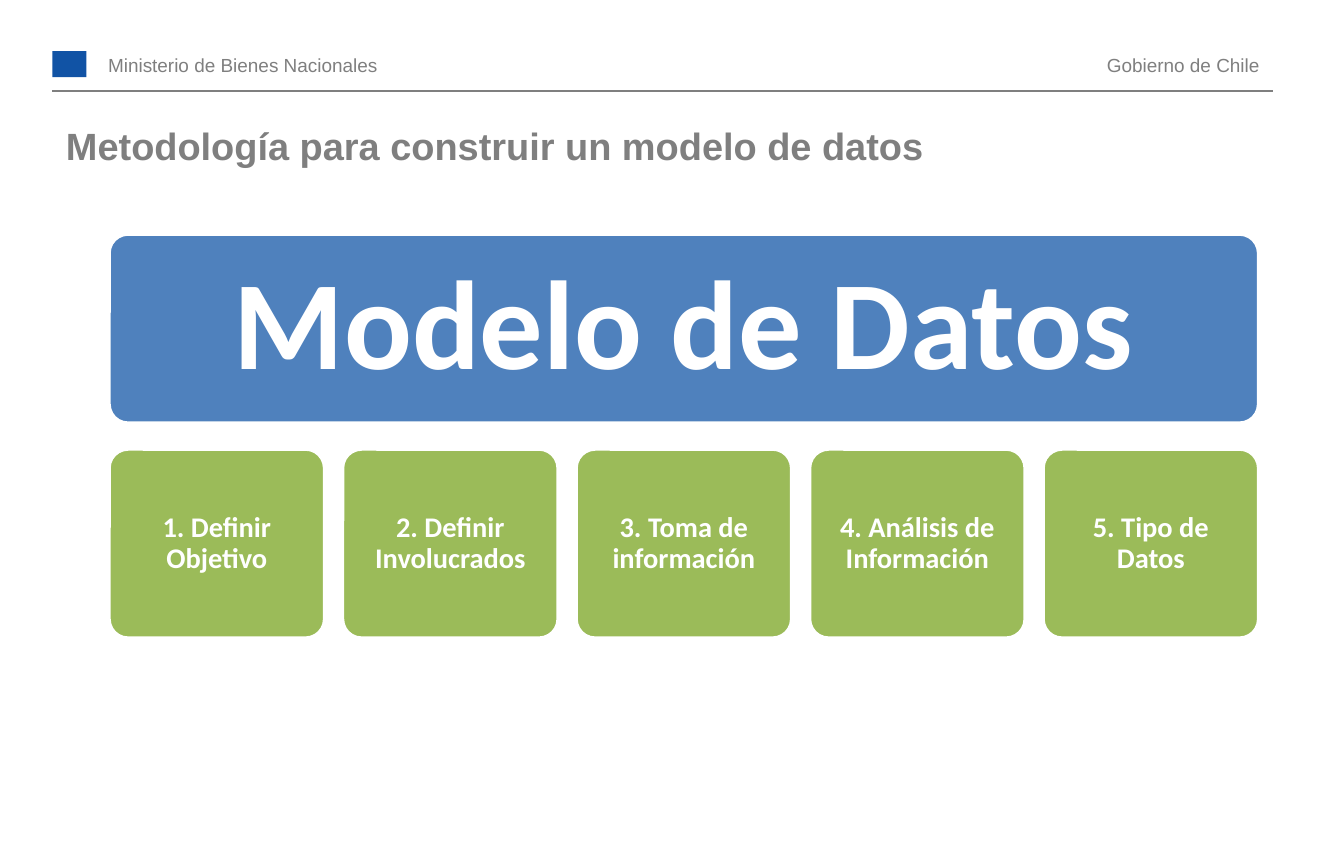
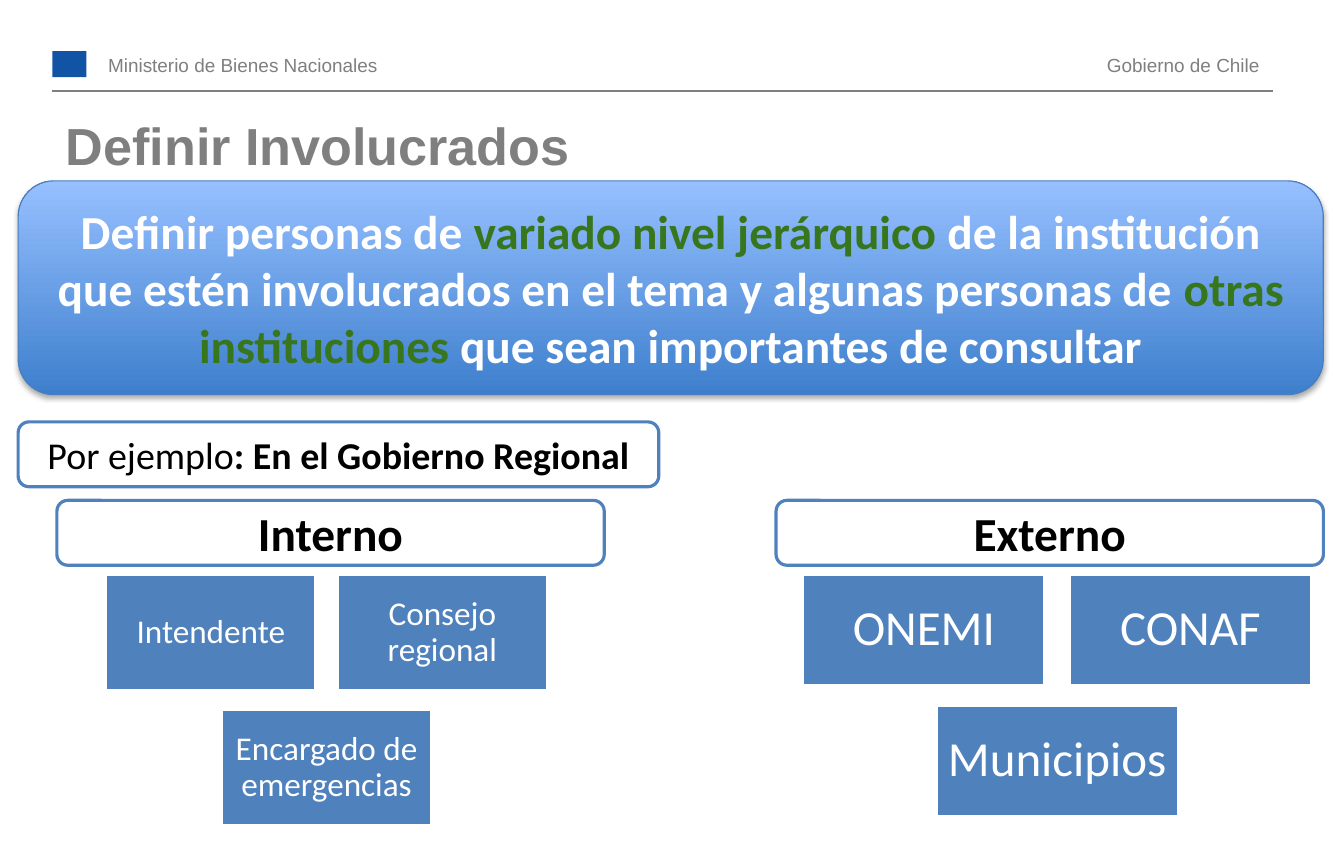
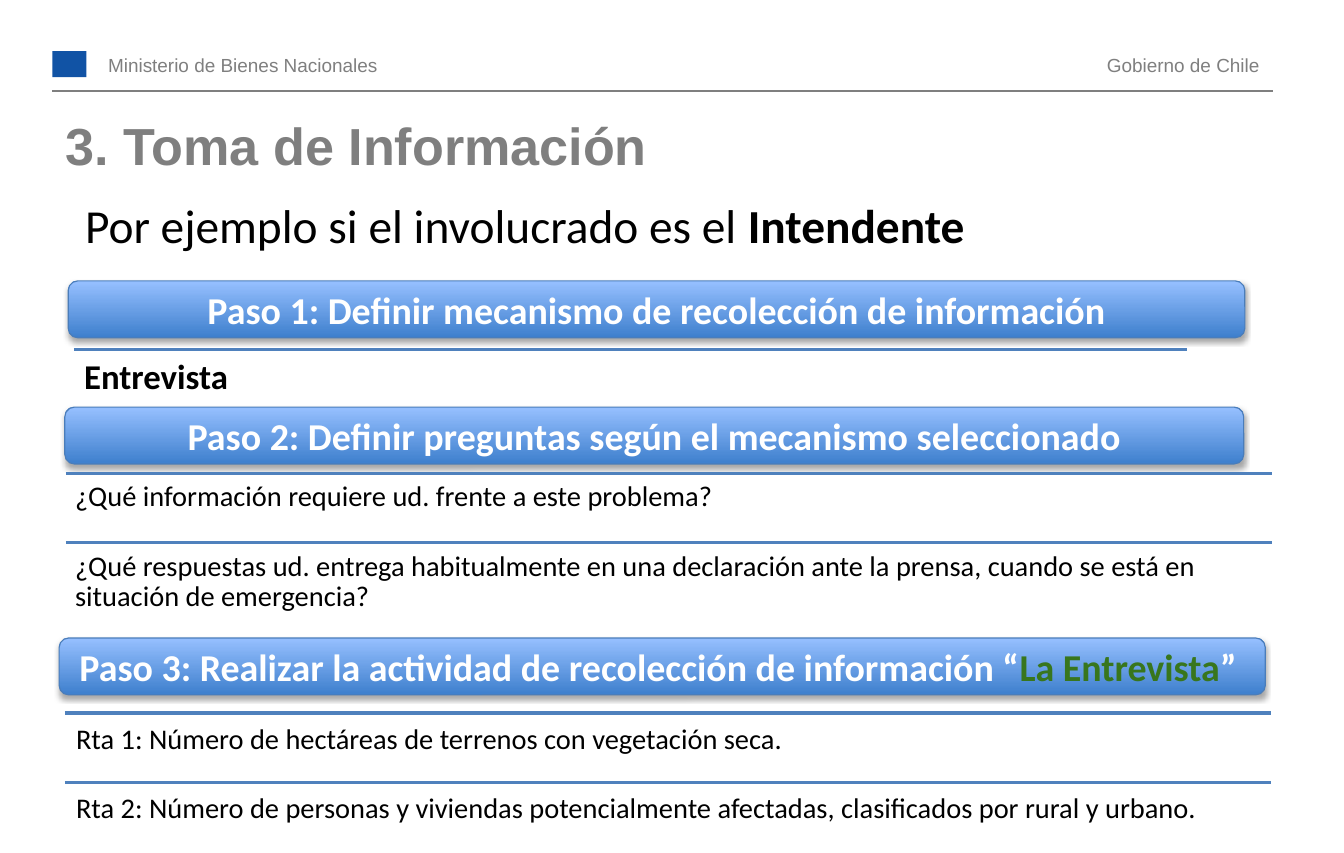
import dataclasses

import lxml.etree
import pptx
import pptx.dml.color
import pptx.enum.dml
import pptx.enum.shapes
import pptx.enum.text
import pptx.oxml.ns
import pptx.util

INSETS = (0.12, 0.06, 0.12, 0.06)
SHAPES = pptx.enum.shapes.MSO_SHAPE
ALIGN = pptx.enum.text.PP_ALIGN
ANCHOR = pptx.enum.text.MSO_ANCHOR


@dataclasses.dataclass(frozen=True)
class Theme:
    heading_font: str = "Arial"
    body_font: str = "Calibri"
    gray: str = "7F7F7F"
    emblem: str = "1153A5"
    blue: str = "4F81BD"
    green: str = "9BBB59"
    accent: str = "38761D"
    white: str = "FFFFFF"
    black: str = "000000"
    band_bottom: str = "3E7FCD"
    band_top: str = "96C0FF"
    band_edge: str = "4A7DBA"
    header: int = 12
    row: int = 18
    member: int = 21
    entry: int = 22
    step: int = 24
    lead: int = 30
    institution: int = 31
    title: int = 33
    hero: int = 80
    thin: float = 0.75
    thick: float = 2


THEME = Theme()
BOLD = {"bold": True}
ACCENT = {"color": THEME.accent}

HEADER = [("Ministerio de Bienes Nacionales", 0.83, ALIGN.LEFT),
          ("Gobierno de Chile", 6.15, ALIGN.RIGHT)]

MODEL_TITLE = "Metodología para construir un modelo de datos"
MODEL = "Modelo de Datos"
MODEL_STEPS = ["1. Definir Objetivo", "2. Definir Involucrados", "3. Toma de información",
               "4. Análisis de Información", "5. Tipo de Datos"]

INVOLVED_TITLE = "Definir Involucrados"
INVOLVED = ["Definir personas de ", ("variado nivel jerárquico", ACCENT),
            " de la institución que estén involucrados en el tema y algunas personas de ",
            ("otras instituciones", ACCENT), " que sean importantes de consultar"]
EXAMPLE = ["Por ejemplo", (": En el Gobierno Regional", BOLD)]
GROUPS = [
    {"heading": "Interno", "left": 0.5, "center": 2.87, "box": (1.85, 1.02),
     "size": THEME.member, "insets": (0.05, 0.09, 0.05, 0.09),
     "members": [["Intendente", "Consejo regional"], ["Encargado de emergencias"]]},
    {"heading": "Externo", "left": 6.82, "center": 9.29, "box": (2.13, 0.98),
     "size": THEME.institution, "insets": (0.05, 0.13, 0.05, 0.13),
     "members": [["ONEMI", "CONAF"], ["Municipios"]]},
]

GATHER_TITLE = "3. Toma de Información"
INTERVIEWEE = ["Por ejemplo si el involucrado es el", (" Intendente", BOLD)]
STEPS = [
    {"text": ["Paso 1: Definir mecanismo de recolección de información"],
     "band": (0.6, 2.47, 10.34), "rows_at": (0.65, 3.07, 9.78),
     "format": {"size": THEME.entry, "bold": True, "inset": 0.09},
     "rows": ["Entrevista"]},
    {"text": ["Paso 2: Definir preguntas según el mecanismo seleccionado"],
     "band": (0.57, 3.58, 10.36), "rows_at": (0.58, 4.16, 10.6),
     "format": {"size": THEME.row, "inset": 0.08},
     "rows": ["¿Qué información requiere ud. frente a este problema?",
              "¿Qué respuestas ud. entrega habitualmente en una declaración ante la prensa, "
              "cuando se está en situación de emergencia?"]},
    {"text": ["Paso 3: Realizar la actividad de recolección de información “",
              ("La Entrevista", ACCENT), "” "],
     "band": (0.52, 5.61, 10.6), "rows_at": (0.57, 6.27, 10.6),
     "format": {"size": THEME.row, "inset": 0.1},
     "rows": ["Rta 1: Número de hectáreas de terrenos con vegetación seca.",
              "Rta 2: Número de personas y viviendas potencialmente afectadas, "
              "clasificados por rural y urbano."]},
]


def rgb(color):
    return pptx.dml.color.RGBColor.from_string(color)


def inches(*lengths):
    return [pptx.util.Inches(length) for length in lengths]


def write(target, runs, *, size, color=THEME.black, font=THEME.body_font, bold=False,
          align=ALIGN.LEFT, anchor=ANCHOR.MIDDLE, insets=INSETS, spacing=None):
    frame = target.text_frame
    frame.word_wrap = True
    frame.vertical_anchor = anchor
    (frame.margin_left, frame.margin_top,
     frame.margin_right, frame.margin_bottom) = inches(*insets)
    paragraph = frame.paragraphs[0]
    paragraph.alignment = align
    if spacing:
        paragraph.line_spacing = spacing
    for piece in [runs] if isinstance(runs, str) else runs:
        words, change = (piece, {}) if isinstance(piece, str) else piece
        run = paragraph.add_run()
        run.text = words
        run.font.name = font
        run.font.size = pptx.util.Pt(size)
        run.font.bold = change.get("bold", bold)
        run.font.color.rgb = rgb(change.get("color", color))


def add_text(slide, at, runs, **style):
    write(slide.shapes.add_textbox(*inches(*at)), runs, **style)


def add_box(slide, at, preset, fill=None, edge=None, weight=THEME.thick, corner=None):
    box = slide.shapes.add_shape(preset, *inches(*at))
    box.shadow.inherit = False
    if corner:
        box.adjustments[0] = corner
    if fill:
        box.fill.solid()
        box.fill.fore_color.rgb = rgb(fill)
    if edge:
        box.line.color.rgb = rgb(edge)
        box.line.width = pptx.util.Pt(weight)
    else:
        box.line.fill.background()
    return box


def add_rule(slide, left, top, width, color, weight):
    rule = slide.shapes.add_connector(pptx.enum.shapes.MSO_CONNECTOR.STRAIGHT,
                                      *inches(left, top, left + width, top))
    rule.line.color.rgb = rgb(color)
    rule.line.width = pptx.util.Pt(weight)
    lxml.etree.SubElement(rule._element.spPr, pptx.oxml.ns.qn("a:effectLst"))


def add_band(slide, at, runs, size):
    band = add_box(slide, at, SHAPES.ROUNDED_RECTANGLE, edge=THEME.band_edge,
                   weight=THEME.thin, corner=0.167)
    band.fill.gradient()
    band.fill.gradient_angle = 90
    for stop, color in zip(band.fill.gradient_stops, (THEME.band_bottom, THEME.band_top)):
        stop.color.rgb = rgb(color)
    qn = pptx.oxml.ns.qn
    shadow = lxml.etree.SubElement(
        band._element.spPr.find(qn("a:effectLst")), qn("a:outerShdw"),
        blurRad=str(pptx.util.Pt(3.1)), dist=str(pptx.util.Pt(1.8)),
        dir="5400000", rotWithShape="0")
    tint = lxml.etree.SubElement(shadow, qn("a:srgbClr"), val=THEME.black)
    lxml.etree.SubElement(tint, qn("a:alpha"), val="35000")
    write(band, runs, size=size, color=THEME.white, bold=True, align=ALIGN.CENTER)


def add_label(slide, at, runs, edge=THEME.blue, **style):
    label = add_box(slide, at, SHAPES.ROUNDED_RECTANGLE, THEME.white, edge, corner=0.167)
    write(label, runs, **style)


def add_tile(slide, at, words, preset, fill, corner=None, **style):
    tile = add_box(slide, at, preset, fill, THEME.white, corner=corner)
    write(tile, words, color=THEME.white, align=ALIGN.CENTER, spacing=0.9, **style)


def start_slide(deck, title, size=THEME.title):
    slide = deck.slides.add_slide(deck.slide_layouts[6])
    add_box(slide, (0.46, 0.45, 0.3, 0.23), SHAPES.RECTANGLE, THEME.emblem)
    for words, left, align in HEADER:
        add_text(slide, (left, 0.4, 5.04, 0.34), words, size=THEME.header,
                 color=THEME.gray, font=THEME.heading_font, align=align)
    add_rule(slide, 0.46, 0.8, 10.73, THEME.gray, THEME.thin)
    add_text(slide, (0.46, 0.81, 10.47, 0.93), title, size=size,
             color=THEME.gray, font=THEME.heading_font, bold=True)
    return slide


def build_model(deck):
    slide = start_slide(deck, MODEL_TITLE, THEME.step)
    left, width, height, gap = 0.96, 10.1, 1.66, 0.16
    card = {"preset": SHAPES.ROUNDED_RECTANGLE, "corner": 0.1, "bold": True,
            "insets": (0.15,) * 4}
    add_tile(slide, (left, 2.06, width, height), MODEL, fill=THEME.blue,
             size=THEME.hero, **card)
    count = len(MODEL_STEPS)
    step_width = (width - gap * (count - 1)) / count
    for index, words in enumerate(MODEL_STEPS):
        add_tile(slide, (left + index * (step_width + gap), 3.95, step_width, height),
                 words, fill=THEME.green, size=THEME.row, **card)


def build_involved(deck):
    slide = start_slide(deck, INVOLVED_TITLE)
    add_band(slide, (0.16, 1.59, 11.47, 1.88), INVOLVED, THEME.lead)
    add_label(slide, (0.16, 3.71, 5.63, 0.57), EXAMPLE, size=THEME.step, align=ALIGN.CENTER)
    for group in GROUPS:
        add_label(slide, (group["left"], 4.4, 4.81, 0.57), group["heading"],
                  size=THEME.lead, bold=True, align=ALIGN.CENTER)
        width, height = group["box"]
        gap = width * 0.1
        for level, members in enumerate(group["members"]):
            row_width = len(members) * (width + gap) - gap
            top = 5.05 + level * (height + 0.17)
            for index, words in enumerate(members):
                left = group["center"] - row_width / 2 + index * (width + gap)
                add_tile(slide, (left, top, width, height), words, SHAPES.RECTANGLE,
                         THEME.blue, size=group["size"], insets=group["insets"])


def build_gathering(deck):
    slide = start_slide(deck, GATHER_TITLE)
    add_label(slide, (0.6, 1.69, 11.04, 0.57), INTERVIEWEE, edge=None, size=THEME.lead)
    row_height = 0.61
    for step in STEPS:
        add_band(slide, (*step["band"], 0.5), step["text"], THEME.step)
        left, first, width = step["rows_at"]
        style = dict(step["format"])
        insets = (style.pop("inset"),) * 4
        for index, words in enumerate(step["rows"]):
            top = first + index * row_height
            add_rule(slide, left, top, width, THEME.blue, THEME.thick)
            add_text(slide, (left, top, width, row_height), words, anchor=ANCHOR.TOP,
                     insets=insets, spacing=0.9, **style)


def main():
    deck = pptx.Presentation()
    deck.slide_width = pptx.util.Cm(30)
    deck.slide_height = pptx.util.Inches(7.5)
    build_model(deck)
    build_involved(deck)
    build_gathering(deck)
    deck.save("out.pptx")


if __name__ == "__main__":
    main()
